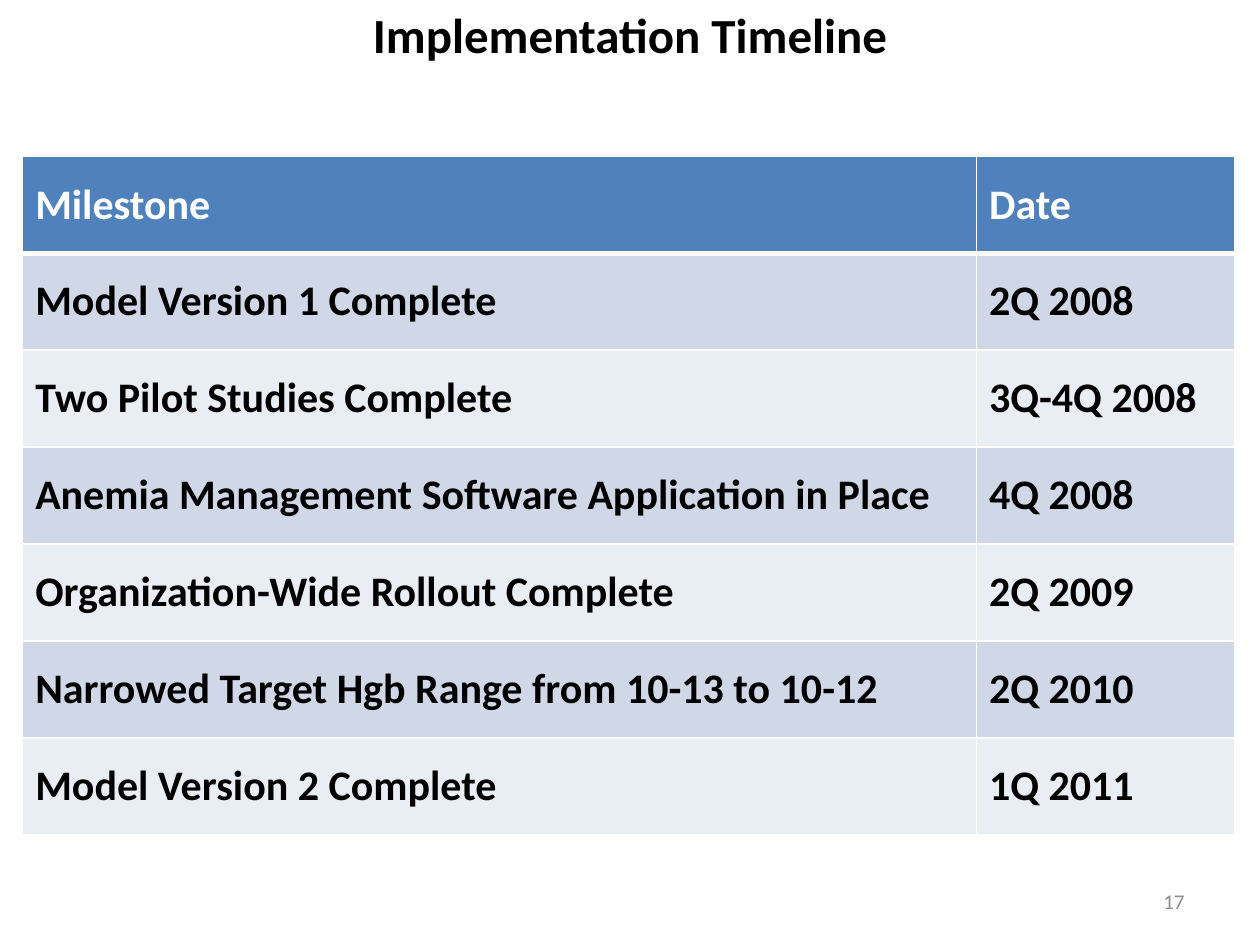
import pptx
import pptx.util
import pptx.dml.color
import pptx.enum.text
import pptx.oxml.ns
from lxml import etree

Inches, Pt = pptx.util.Inches, pptx.util.Pt
ALIGN, ANCHOR = pptx.enum.text.PP_ALIGN, pptx.enum.text.MSO_ANCHOR

FONT = "Calibri"
COLORS = {
    "text": "000000",
    "white": "FFFFFF",
    "header": "4F81BD",
    "band_dark": "D0D8E8",
    "band_light": "E9EDF4",
    "number": "8C8C8C",
}
ROWS = [
    ("Milestone", "Date"),
    ("Model Version 1 Complete", "2Q 2008"),
    ("Two Pilot Studies Complete", "3Q-4Q 2008"),
    ("Anemia Management Software Application in Place", "4Q 2008"),
    ("Organization-Wide Rollout Complete", "2Q 2009"),
    ("Narrowed Target Hgb Range from 10-13 to 10-12", "2Q 2010"),
    ("Model Version 2 Complete", "1Q 2011"),
]
COL_WIDTHS = (7.57, 2.05)
ROW_HEIGHT = 0.77


def rgb(name):
    return pptx.dml.color.RGBColor.from_string(COLORS[name])


def set_text(tf, text, size, color, bold=False, align=ALIGN.LEFT):
    tf.text = text
    p = tf.paragraphs[0]
    p.alignment = align
    font = p.runs[0].font
    font.name, font.size, font.bold = FONT, Pt(size), bold
    font.color.rgb = rgb(color)


def add_text(s, box, text, size, color, bold, align, anchor):
    tf = s.shapes.add_textbox(*map(Inches, box)).text_frame
    tf.word_wrap = True
    tf.vertical_anchor = anchor
    set_text(tf, text, size, color, bold, align)


def set_borders(cell, top, bottom):
    """Draw white cell borders; widths are in points."""
    qn = pptx.oxml.ns.qn
    tc_pr = cell._tc.get_or_add_tcPr()
    for side, width in (("L", 1), ("R", 1), ("T", top), ("B", bottom)):
        ln = etree.SubElement(tc_pr, qn(f"a:ln{side}"), w=str(Pt(width)))
        fill = etree.SubElement(ln, qn("a:solidFill"))
        etree.SubElement(fill, qn("a:srgbClr"), val=COLORS["white"])


def add_timeline(s, left, top):
    table = s.shapes.add_table(
        len(ROWS), len(COL_WIDTHS), Inches(left), Inches(top),
        Inches(sum(COL_WIDTHS)), Inches(ROW_HEIGHT * len(ROWS))).table
    for column, width in zip(table.columns, COL_WIDTHS):
        column.width = Inches(width)
    for i, values in enumerate(ROWS):
        table.rows[i].height = Inches(ROW_HEIGHT)
        band = "header" if i == 0 else "band_dark" if i % 2 else "band_light"
        for j, value in enumerate(values):
            cell = table.cell(i, j)
            cell.vertical_anchor = ANCHOR.MIDDLE
            # A thick rule separates the header from the body
            set_borders(cell, 3 if i == 1 else 1, 3 if i == 0 else 1)
            cell.fill.solid()
            cell.fill.fore_color.rgb = rgb(band)
            set_text(cell.text_frame, value, 24, "text" if i else "white", True)


def main():
    prs = pptx.Presentation()
    prs.slide_width, prs.slide_height = Inches(10), Inches(7.5)
    s = prs.slides.add_slide(prs.slide_layouts[6])

    # Title
    add_text(s, (0.5, -0.01, 9, 0.9), "Implementation Timeline", 28, "text",
             True, ALIGN.CENTER, ANCHOR.TOP)
    # Slide number
    add_text(s, (7.17, 6.95, 2.33, 0.4), "17", 12, "number",
             False, ALIGN.RIGHT, ANCHOR.MIDDLE)
    # Milestone table
    add_timeline(s, 0.18, 1.24)

    prs.save("out.pptx")


if __name__ == "__main__":
    main()
